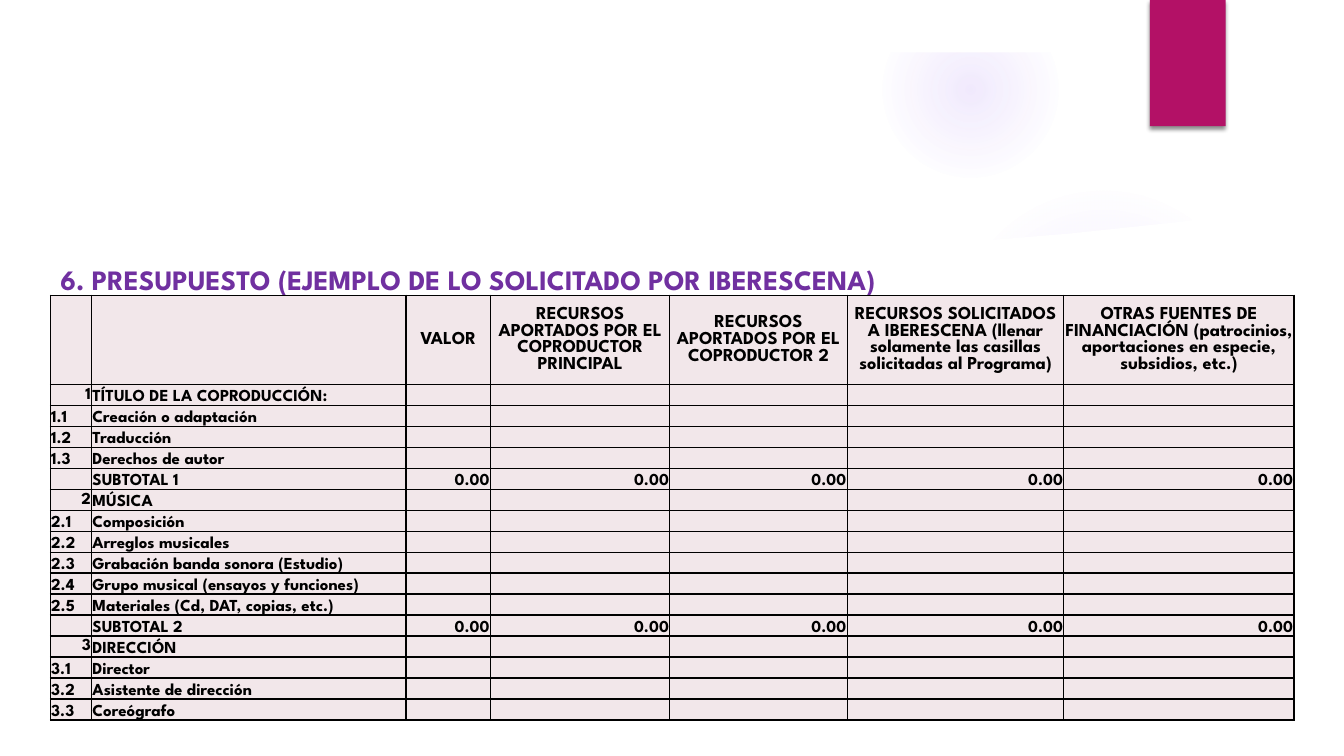
from lxml.etree import SubElement
from pptx import Presentation
from pptx.dml.color import RGBColor
from pptx.enum.shapes import MSO_SHAPE as SHAPE
from pptx.enum.text import MSO_ANCHOR as ANCHOR, PP_ALIGN as ALIGN
from pptx.oxml import parse_xml
from pptx.oxml.ns import nsdecls, qn
from pptx.util import Cm, Pt

HEADINGS = [
    "", "", "VALOR",
    "RECURSOS APORTADOS POR EL COPRODUCTOR PRINCIPAL",
    "RECURSOS APORTADOS POR EL COPRODUCTOR 2",
    "RECURSOS SOLICITADOS A IBERESCENA (llenar solamente las casillas solicitadas al Programa)",
    "OTRAS FUENTES DE FINANCIACIÓN (patrocinios, aportaciones en especie, subsidios, etc.)",
]
SECTIONS = [
    ("TÍTULO DE LA COPRODUCCIÓN:", ["Creación o adaptación", "Traducción", "Derechos de autor"], True),
    ("MÚSICA", ["Composición", "Arreglos musicales", "Grabación banda sonora (Estudio)",
                "Grupo musical (ensayos y funciones)", "Materiales (Cd, DAT, copias, etc.)"], True),
    ("DIRECCIÓN", ["Director", "Asistente de dirección", "Coreógrafo"], False),
]
COLUMNS = [1.04, 7.92, 2.13, 4.52, 4.47, 5.46, 5.8]
PANEL = [(1.27, 5.18), (4.75, 5.61), (9.14, 5.99), (14.2, 6.25), (18, 6.3), (22.02, 6.22),
         (24.1, 6.12), (26.92, 5.89), (29.77, 5.59), (32.61, 5.18), (32.61, 17.78), (1.27, 17.78)]
FRAME = [(0, 0), (0, 19.05), (33.87, 19.05), (33.87, 0)]
WINDOW = [(32.54, 17.73), (1.32, 17.73), (1.32, 1.32), (32.54, 1.32)]


def rgb(value):
    return RGBColor.from_string(value)


def budget_rows():
    blanks = [""] * 5
    rows = [HEADINGS]
    for number, (title, items, subtotal) in enumerate(SECTIONS, 1):
        rows.append([str(number), title, *blanks])
        rows += [[f"{number}.{i}", item, *blanks] for i, item in enumerate(items, 1)]
        if subtotal:
            rows.append(["", f"SUBTOTAL {number}", *["0.00"] * 5])
    return rows


class Deck:
    font = "League Spartan"
    black, white, glow_color = "000000", "FFFFFF", "9B6BF2"
    accent, title_color, cell_color = "B31166", "7030A0", "F2E7EA"

    def __init__(self):
        self.prs = Presentation()
        self.prs.slide_width, self.prs.slide_height = Cm(33.87), Cm(19.05)
        self.s = self.prs.slides.add_slide(self.prs.slide_layouts[6])

    def paint(self, sp, color):
        sp.shadow.inherit = False
        sp.line.fill.background()
        sp.fill.solid()
        sp.fill.fore_color.rgb = rgb(color)

    def glow(self, x, y, size, stops):
        sp = self.s.shapes.add_shape(SHAPE.OVAL, Cm(x), Cm(y), Cm(size), Cm(size))
        self.paint(sp, self.glow_color)
        gs = "".join(
            f'<a:gs pos="{pos * 1000}"><a:srgbClr val="{self.glow_color}">'
            f'<a:alpha val="{alpha * 1000}"/></a:srgbClr></a:gs>' for pos, alpha in stops)
        grad = parse_xml(
            f'<a:gradFill {nsdecls("a")}><a:gsLst>{gs}</a:gsLst><a:path path="circle">'
            '<a:fillToRect l="50000" t="50000" r="50000" b="50000"/></a:path></a:gradFill>')
        spPr = sp._element.spPr
        spPr.replace(spPr.find(qn("a:solidFill")), grad)

    def outline(self, *contours):
        first, *others = [[(Cm(x), Cm(y)) for x, y in points] for points in contours]
        builder = self.s.shapes.build_freeform(*first[0])
        builder.add_line_segments(first[1:], close=True)
        for points in others:
            builder.move_to(*points[0])
            builder.add_line_segments(points[1:], close=True)
        self.paint(builder.convert_to_shape(), self.white)

    def tab(self, x, y, w, h):
        sp = self.s.shapes.add_shape(SHAPE.RECTANGLE, Cm(x), Cm(y), Cm(w), Cm(h))
        self.paint(sp, self.accent)
        sp._element.spPr.find(qn("a:effectLst")).append(parse_xml(
            f'<a:outerShdw {nsdecls("a")} blurRad="38100" dist="25400" dir="5400000" rotWithShape="0">'
            '<a:srgbClr val="000000"><a:alpha val="45000"/></a:srgbClr></a:outerShdw>'))

    def fill_text(self, p, text, size, color):
        if not text:
            end = SubElement(p._p, qn("a:endParaRPr"), sz=str(size * 100))
            SubElement(end, qn("a:latin"), typeface=self.font)
            return
        r = p.add_run()
        r.text = text
        for name, value in {"name": self.font, "size": Pt(size), "bold": True}.items():
            setattr(r.font, name, value)
        r.font.color.rgb = rgb(color)

    def title(self, text, x, y, w, h):
        tf = self.s.shapes.add_textbox(Cm(x), Cm(y), Cm(w), Cm(h)).text_frame
        tf.word_wrap = True
        self.fill_text(tf.paragraphs[0], text, 20, self.title_color)

    def cell(self, cell, text, size, align, anchor):
        tcPr = cell._tc.get_or_add_tcPr()
        for side in ("lnL", "lnR", "lnT", "lnB"):
            tcPr.append(parse_xml(
                f'<a:{side} {nsdecls("a")} w="12700"><a:solidFill>'
                f'<a:srgbClr val="{self.black}"/></a:solidFill></a:{side}>'))
        cell.fill.solid()
        cell.fill.fore_color.rgb = rgb(self.cell_color)
        layout = {"margin_left": Cm(0.02), "margin_right": Cm(0.02), "margin_top": Cm(0.02),
                  "margin_bottom": 0, "vertical_anchor": anchor}
        for name, value in layout.items():
            setattr(cell, name, value)
        p = cell.text_frame.paragraphs[0]
        p.alignment = align
        self.fill_text(p, text, size, self.black)

    def table(self, rows, x, y, widths, head_height, row_height):
        heights = [head_height] + [row_height] * (len(rows) - 1)
        table = self.s.shapes.add_table(len(rows), len(widths), Cm(x), Cm(y),
                                        Cm(sum(widths)), Cm(sum(heights))).table
        table.first_row = table.horz_banding = False
        for column, width in zip(table.columns, widths):
            column.width = Cm(width)
        for i, (texts, height) in enumerate(zip(rows, heights)):
            table.rows[i].height = Cm(height)
            for j, text in enumerate(texts):
                section_number = j == 0 and text.isdigit()
                if i == 0:
                    style = 13, ALIGN.CENTER, ANCHOR.MIDDLE
                elif section_number:
                    style = 12, ALIGN.RIGHT, ANCHOR.MIDDLE
                else:
                    style = 12, ALIGN.RIGHT if j > 1 else ALIGN.LEFT, ANCHOR.BOTTOM
                self.cell(table.cell(i, j), text, *style)


def main():
    deck = Deck()
    deck.glow(23.9, 4.65, 7.82, [(0, 7), (36, 6), (69, 0)])
    deck.glow(22.23, 0.03, 4.45, [(0, 14), (36, 7), (73, 0)])
    deck.outline(PANEL)
    deck.outline(FRAME, WINDOW)
    deck.tab(28.98, 0, 1.91, 3.18)
    deck.title("6. PRESUPUESTO (EJEMPLO DE LO SOLICITADO POR IBERESCENA)", 1.27, 6.48, 24.5, 1)
    deck.table(budget_rows(), 1.27, 7.44, COLUMNS, 2.24, 0.46)
    deck.prs.save("out.pptx")


if __name__ == "__main__":
    main()
